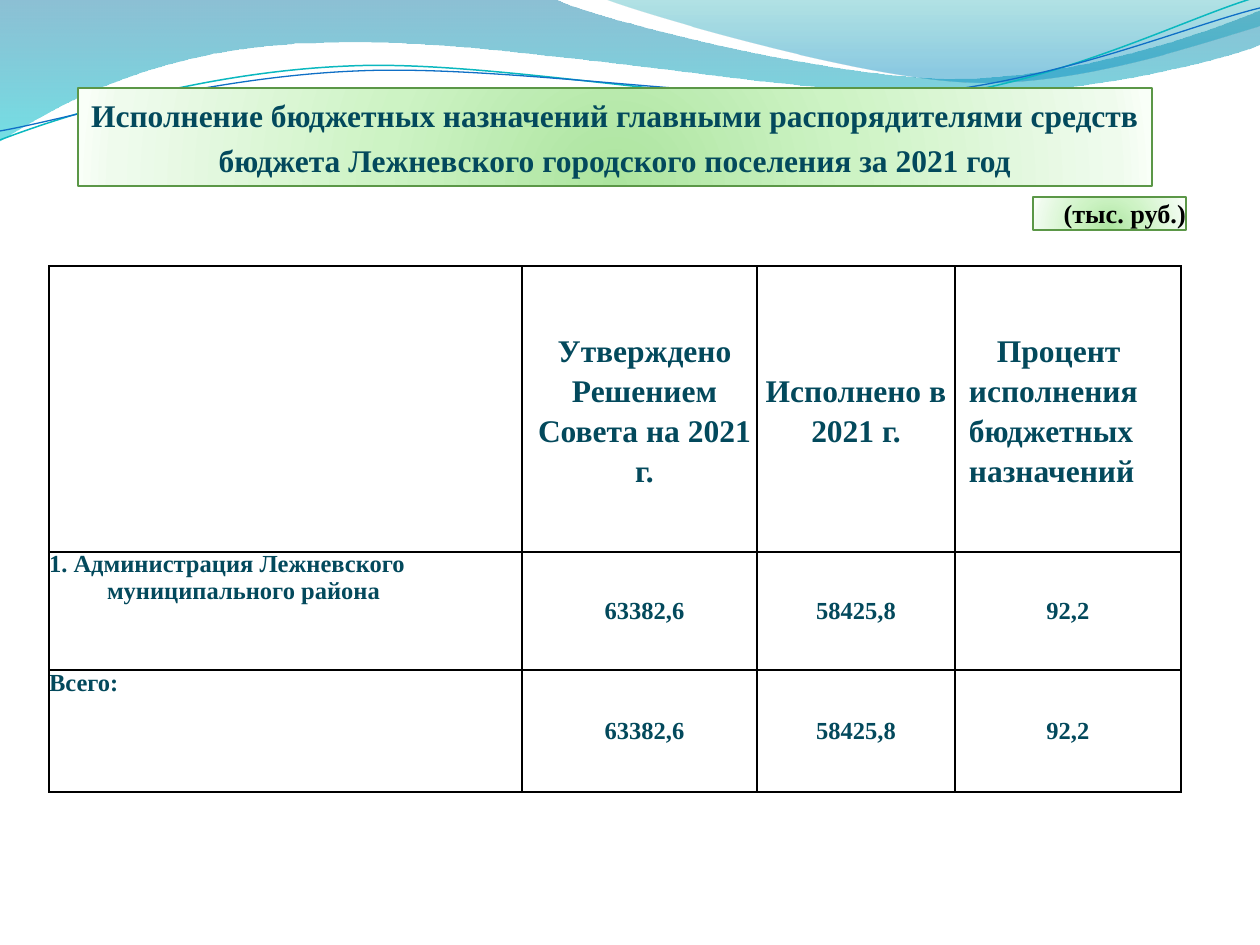
from math import cos, radians, sin
from lxml.etree import SubElement
from pptx import Presentation
from pptx.dml.color import RGBColor
from pptx.enum.shapes import MSO_SHAPE as SHAPE
from pptx.enum.text import MSO_ANCHOR as ANCHOR, MSO_AUTO_SIZE as AUTOSIZE, PP_ALIGN as ALIGN
from pptx.oxml.ns import qn
from pptx.util import Pt

PX = 914400 / 126
FONT = "Times New Roman"
TEAL = "03495C"
GREEN = "5B9747"
GREEN_STOPS = [(0, "ACE49F", 100), (43, "CDF3C4", 100), (93, "EFFBED", 100), (100, "F9FFF8", 100)]
WAVE_ANGLE = 357.3

BLUE_BAND = [[(0, 0)], [(554, -1)], [(600, 21), (837, 79), (955, 79)],
             [(1074, 79), (1207, 33), (1260, 11)], [(1261, 45)],
             [(1239, 55), (1096, 96), (940, 95)], [(784, 95), (481, 35), (324, 43)],
             [(163, 45), (58, 105), (-1, 142)], [(0, 0)]]
RIGHT_BAND = [[(604, -1)], [(641, 14), (859, 78), (969, 82)],
              [(1079, 87), (1211, 40), (1260, 26)], [(1260, 0)], [(604, -1)]]
CYAN_WAVE = [[(0, 140)], [(60, 117), (199, 72), (349, 66)],
             [(498, 59), (747, 112), (898, 101)], [(1050, 89), (1182, 19), (1257, -3)]]
BLUE_WAVE = [[(0, 131)], [(59, 121), (207, 77), (357, 71)],
             [(508, 64), (752, 106), (903, 95)], [(1053, 84), (1186, 26), (1260, 8)]]


def emu(px):
    return round(px * PX)


def rgb(value):
    return RGBColor.from_string(value)


def node(parent, tag, **attrs):
    return SubElement(parent, qn(tag), {k: str(v) for k, v in attrs.items()})


def color_node(parent, color, opacity=100):
    clr = node(parent, "a:srgbClr", val=color)
    if opacity < 100:
        node(clr, "a:alpha", val=opacity * 1000)


def gradient(sp, stops, radial=False):
    grad = node(sp._element.spPr, "a:gradFill", rotWithShape=1)
    gs_list = node(grad, "a:gsLst")
    for pos, color, opacity in stops:
        color_node(node(gs_list, "a:gs", pos=pos * 1000), color, opacity)
    if radial:
        circle = node(grad, "a:path", path="circle")
        node(circle, "a:fillToRect", l=50000, t=130000, r=50000, b=-30000)
    else:
        node(grad, "a:lin", ang=5400000, scaled=1)


def outline(sp, color, width):
    sp.line.color.rgb = rgb(color)
    sp.line.width = Pt(width)


def local_point(point, box, angle):
    left, top, width, height = box
    dx, dy = point[0] - left - width / 2, point[1] - top - height / 2
    c, s = cos(radians(-angle)), sin(radians(-angle))
    return emu(dx * c - dy * s + width / 2), emu(dx * s + dy * c + height / 2)


def add_path(slide, segments, box, angle=0):
    left, top, width, height = box
    builder = slide.shapes.build_freeform(emu(left), emu(top), scale=1.0)
    builder.add_line_segments([(emu(left + width), emu(top + height))], close=False)
    sp = builder.convert_to_shape()
    sp.rotation = angle
    geometry = next(sp._element.iter(qn("a:path")))
    for child in list(geometry):
        geometry.remove(child)
    for i, seg in enumerate(segments):
        tag = "a:moveTo" if i == 0 else "a:cubicBezTo" if len(seg) == 3 else "a:lnTo"
        step = node(geometry, tag)
        for point in seg:
            x, y = local_point(point, box, angle)
            node(step, "a:pt", x=x, y=y)
    if segments[0][0] == segments[-1][-1]:
        node(geometry, "a:close")
    return sp


def add_band(slide, segments, box, stops):
    sp = add_path(slide, segments, box)
    gradient(sp, stops)
    sp.line.fill.background()
    sp.shadow.inherit = False


def add_wave(slide, segments, box, color, width):
    sp = add_path(slide, segments, box, WAVE_ANGLE)
    sp.fill.background()
    outline(sp, color, width)
    sp.shadow.inherit = False


def add_text(tf, lines, size, color=TEAL, align=ALIGN.LEFT, spacing=None, margins=(0,), indent=0):
    for i, line in enumerate(lines):
        p = tf.add_paragraph() if i else tf.paragraphs[0]
        p.alignment = align
        if spacing:
            p.line_spacing = Pt(spacing)
        pPr = p._p.get_or_add_pPr()
        pPr.set("marL", str(emu(margins[min(i, len(margins) - 1)])))
        pPr.set("indent", str(emu(indent)))
        r = p.add_run()
        r.text = line
        r.font.name = FONT
        r.font.size = Pt(size)
        r.font.bold = True
        r.font.color.rgb = rgb(color)


def style_panel(sp, box, wrap):
    sp.left, sp.top, sp.width, sp.height = map(emu, box)
    gradient(sp, GREEN_STOPS, radial=True)
    outline(sp, GREEN, 0.75)
    sp.shadow.inherit = False
    tf = sp.text_frame
    tf.margin_left = tf.margin_top = tf.margin_right = tf.margin_bottom = 0
    tf.vertical_anchor = ANCHOR.TOP
    tf.auto_size = AUTOSIZE.NONE
    tf.word_wrap = wrap
    return tf


def add_title(slide, text):
    sp = slide.shapes.title
    slide.shapes._spTree.append(sp._element)
    tf = style_panel(sp, (78, 88, 1074, 98), True)
    add_text(tf, [text], 18, align=ALIGN.CENTER, spacing=25.9)


def add_unit(slide, text):
    sp = slide.shapes.add_shape(SHAPE.RECTANGLE, 0, 0, 0, 0)
    tf = style_panel(sp, (1033, 197, 153, 33), False)
    add_text(tf, [text], 15, "000000", ALIGN.RIGHT)


def style_cell(cell, anchor):
    cell.margin_left = cell.margin_top = cell.margin_right = cell.margin_bottom = 0
    cell.vertical_anchor = anchor
    tcPr = cell._tc.get_or_add_tcPr()
    for side in ("a:lnL", "a:lnR", "a:lnT", "a:lnB"):
        color_node(node(node(tcPr, side, w=Pt(1)), "a:solidFill"), "000000")
    cell.fill.background()


def add_budget_table(slide):
    widths, heights = (473, 235, 198, 226), (286, 118, 122)
    frame = slide.shapes.add_table(3, 4, emu(49), emu(266), emu(sum(widths)), emu(sum(heights)))
    table = frame.table
    table.first_row = table.horz_banding = False
    for col, width in zip(table.columns, widths):
        col.width = emu(width)
    for row, height in zip(table.rows, heights):
        row.height = emu(height)
    for row in range(3):
        for col in range(4):
            style_cell(table.cell(row, col), ANCHOR.MIDDLE if col else ANCHOR.TOP)

    def put(row, col, lines, size, **options):
        add_text(table.cell(row, col).text_frame, lines, size, **options)

    put(0, 1, ["Утверждено Решением Совета на 2021 г."], 18, align=ALIGN.CENTER, spacing=23, margins=(10,))
    put(0, 2, ["Исполнено в 2021 г."], 18, align=ALIGN.CENTER, spacing=22.8)
    put(0, 3, ["Процент", "исполнения", "бюджетных", "назначений"], 18, spacing=23, margins=(42, 14))
    put(1, 0, ["1. Администрация Лежневского муниципального района"], 14, spacing=15, margins=(58,), indent=-58)
    put(2, 0, ["Всего:"], 14)
    for row in (1, 2):
        for col, value in enumerate(("63382,6", "58425,8", "92,2"), 1):
            put(row, col, [value], 14, align=ALIGN.CENTER, margins=(10 if col == 1 else 0,))


def main():
    prs = Presentation()
    prs.slide_width, prs.slide_height = emu(1260), emu(945)
    slide = prs.slides.add_slide(prs.slide_layouts[5])
    add_band(slide, BLUE_BAND, (-1, -1, 1262, 144), [(0, "0074A1", 45), (100, "00C6CF", 55)])
    add_band(slide, RIGHT_BAND, (604, -1, 656, 88), [(0, "00A1A9", 30), (80, "008BBF", 45)])
    add_wave(slide, CYAN_WAVE, (-2, 28, 1262, 89), "0AB8BF", 0.85)
    add_wave(slide, BLUE_WAVE, (-2, 38, 1264, 73), "0F6FC6", 0.75)
    add_title(slide, "Исполнение бюджетных назначений главными распорядителями средств "
                     "бюджета Лежневского городского поселения за 2021 год")
    add_unit(slide, "(тыс. руб.)")
    add_budget_table(slide)
    prs.save("out.pptx")


if __name__ == "__main__":
    main()
